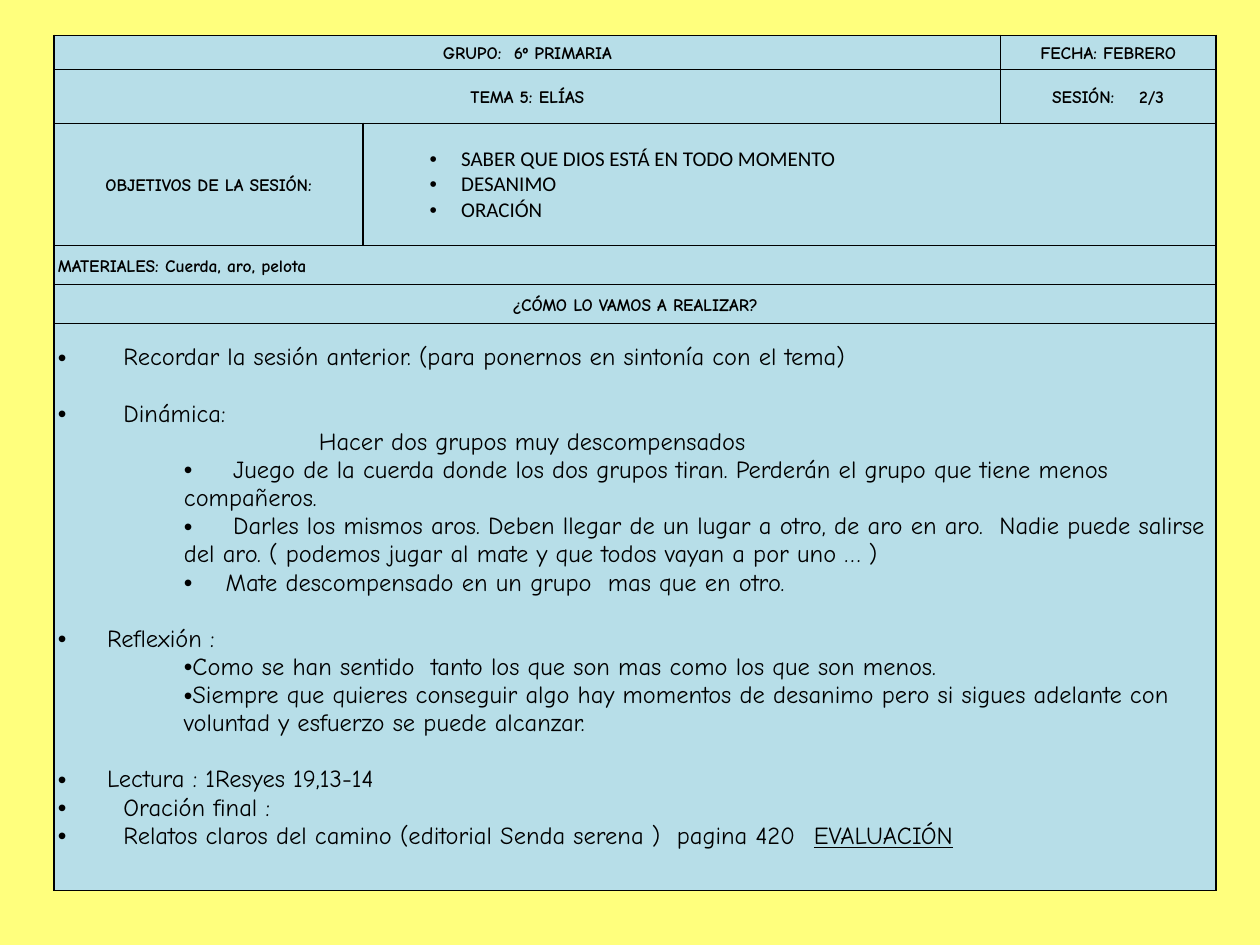
from dataclasses import dataclass

from lxml import etree
from pptx import Presentation
from pptx.dml.color import RGBColor
from pptx.enum.text import MSO_ANCHOR, PP_ALIGN
from pptx.oxml.ns import qn
from pptx.util import Inches, Pt

CENTER, LEFT = PP_ALIGN.CENTER, PP_ALIGN.LEFT
MIDDLE, TOP = MSO_ANCHOR.MIDDLE, MSO_ANCHOR.TOP
BLANK_LAYOUT = 6


@dataclass(frozen=True)
class Theme:
    background: str = "FFFF7D"
    cell: str = "B7DEE8"
    ink: str = "000000"
    heading_font: str = "Comic Neue"
    list_font: str = "Calibri"
    heading_size: int = 10
    list_size: int = 12
    body_size: int = 14
    block_gap: int = 16


THEME = Theme()
COLUMN_WIDTHS = (2.45, 5.06, 1.71)
ROW_HEIGHTS = (0.27, 0.43, 0.97, 0.31, 0.31, 4.5)

# Row, first column, last column, text, alignment
HEADINGS = (
    (0, 0, 1, "GRUPO:  6º PRIMARIA", CENTER),
    (0, 2, 2, "FECHA: FEBRERO", CENTER),
    (1, 0, 1, "TEMA 5: ELÍAS", CENTER),
    (1, 2, 2, "SESIÓN:    2/3", CENTER),
    (2, 0, 0, "OBJETIVOS DE LA SESIÓN:", CENTER),
    (3, 0, 2, "MATERIALES: Cuerda, aro, pelota", LEFT),
    (4, 0, 2, "¿CÓMO LO VAMOS A REALIZAR?", CENTER),
)
OBJECTIVES = ("SABER QUE DIOS ESTÁ EN TODO MOMENTO", "DESANIMO", "ORACIÓN")

# Paragraph formats of the activity list
WIDE = dict(margin=0.52, indent=-0.52, bullet=True)
NARROW = dict(margin=0.39, indent=-0.39, bullet=True)
INTRO = dict(margin=2.07)
STEP = dict(margin=1, bullet=True, level=2, tab=1.39)
LAST_STEP = STEP | dict(tab=1.33)
THOUGHT = dict(margin=1, bullet=True, level=2)
NEW_BLOCK = dict(space_before=THEME.block_gap)

ACTIVITIES = (
    ("Recordar la sesión anterior. (para ponernos en sintonía con el tema)", WIDE),
    ("Dinámica:", WIDE | NEW_BLOCK),
    ("Hacer dos grupos muy descompensados", INTRO),
    ("\tJuego de la cuerda donde los dos grupos tiran. Perderán el grupo que "
     "tiene menos compañeros.", STEP),
    ("\tDarles los mismos aros. Deben llegar de un lugar a otro, de aro en aro.  "
     "Nadie puede salirse del aro. ( podemos jugar al mate y que todos vayan a "
     "por uno … )", STEP),
    ("\tMate descompensado en un grupo  mas que en otro.", LAST_STEP),
    ("Reflexión :", NARROW | NEW_BLOCK),
    ("Como se han sentido  tanto los que son mas como los que son menos.", THOUGHT),
    ("Siempre que quieres conseguir algo hay momentos de desanimo pero si sigues "
     "adelante con voluntad y esfuerzo se puede alcanzar.", THOUGHT),
    ("Lectura : 1Resyes 19,13-14", NARROW | NEW_BLOCK),
    ("Oración final :", WIDE),
    ("Relatos claros del camino (editorial Senda serena )  pagina 420\t",
     WIDE | dict(tab=6, underlined="EVALUACIÓN")),
)


def add_xml(parent, tag, **attributes):
    element = etree.SubElement(parent, qn(tag))
    for name, value in attributes.items():
        element.set(name, str(value))
    return element


def add_run(paragraph, text, font, size, bold, underline=None):
    run = paragraph.add_run()
    run.text = text
    run.font.name = font
    run.font.size = Pt(size)
    run.font.bold = bold
    run.font.underline = underline
    run.font.color.rgb = RGBColor.from_string(THEME.ink)


def add_text(cell, text, *, font=THEME.heading_font, size=THEME.body_size,
             bold=False, align=LEFT, line_spacing=1, space_before=0, level=0,
             margin=0, indent=0, bullet=False, tab=None, underlined=None):
    """Fill the cell's empty first paragraph, or append another one."""
    frame = cell.text_frame
    paragraph = frame.add_paragraph() if frame.text else frame.paragraphs[0]
    paragraph.alignment = align
    paragraph.level = level
    paragraph.line_spacing = line_spacing
    paragraph.space_before = Pt(space_before)
    properties = paragraph._p.get_or_add_pPr()
    properties.set("marL", str(Inches(margin)))
    properties.set("indent", str(Inches(indent)))
    if bullet:
        add_xml(properties, "a:buFont", typeface="Arial")
        add_xml(properties, "a:buChar", char="•")
    else:
        add_xml(properties, "a:buNone")
    if tab is not None:
        tabs = add_xml(properties, "a:tabLst")
        add_xml(tabs, "a:tab", pos=Inches(tab), algn="l")
    add_run(paragraph, text, font, size, bold)
    if underlined:
        add_run(paragraph, underlined, font, size, bold, underline=True)


def style_cell(cell):
    properties = cell._tc.get_or_add_tcPr()
    for side in ("a:lnL", "a:lnR", "a:lnT", "a:lnB"):
        line = add_xml(properties, side, w=Pt(1))
        add_xml(add_xml(line, "a:solidFill"), "a:srgbClr", val=THEME.ink)
    cell.fill.solid()
    cell.fill.fore_color.rgb = RGBColor.from_string(THEME.cell)
    cell.margin_left = cell.margin_right = Inches(0.03)
    cell.margin_top = cell.margin_bottom = 0
    cell.vertical_anchor = MIDDLE


def add_session_table(slide):
    table = slide.shapes.add_table(
        len(ROW_HEIGHTS), len(COLUMN_WIDTHS), Inches(0.43), Inches(0.28),
        Inches(sum(COLUMN_WIDTHS)), Inches(sum(ROW_HEIGHTS))).table
    table.first_row = table.horz_banding = False
    for column, width in zip(table.columns, COLUMN_WIDTHS):
        column.width = Inches(width)
    for row, height in zip(table.rows, ROW_HEIGHTS):
        row.height = Inches(height)
    for cell in table.iter_cells():
        style_cell(cell)
    return table


def span(table, row, first, last):
    cell = table.cell(row, first)
    if last > first:
        cell.merge(table.cell(row, last))
    return cell


def fill_headings(table):
    for row, first, last, text, align in HEADINGS:
        add_text(span(table, row, first, last), text, size=THEME.heading_size,
                 bold=True, align=align, line_spacing=1.15)


def fill_objectives(table):
    cell = span(table, 2, 1, 2)
    for objective in OBJECTIVES:
        add_text(cell, objective, font=THEME.list_font, size=THEME.list_size,
                 level=1, margin=0.75, indent=-0.25, bullet=True)


def fill_activities(table):
    cell = span(table, 5, 0, 2)
    cell.vertical_anchor = TOP
    cell.margin_top = Inches(0.16)
    for text, paragraph_format in ACTIVITIES:
        add_text(cell, text, **paragraph_format)


def main():
    presentation = Presentation()
    presentation.slide_width, presentation.slide_height = Inches(10), Inches(7.5)
    slide = presentation.slides.add_slide(presentation.slide_layouts[BLANK_LAYOUT])
    slide.background.fill.solid()
    slide.background.fill.fore_color.rgb = RGBColor.from_string(THEME.background)
    table = add_session_table(slide)
    fill_headings(table)
    fill_objectives(table)
    fill_activities(table)
    presentation.save("out.pptx")


if __name__ == "__main__":
    main()
